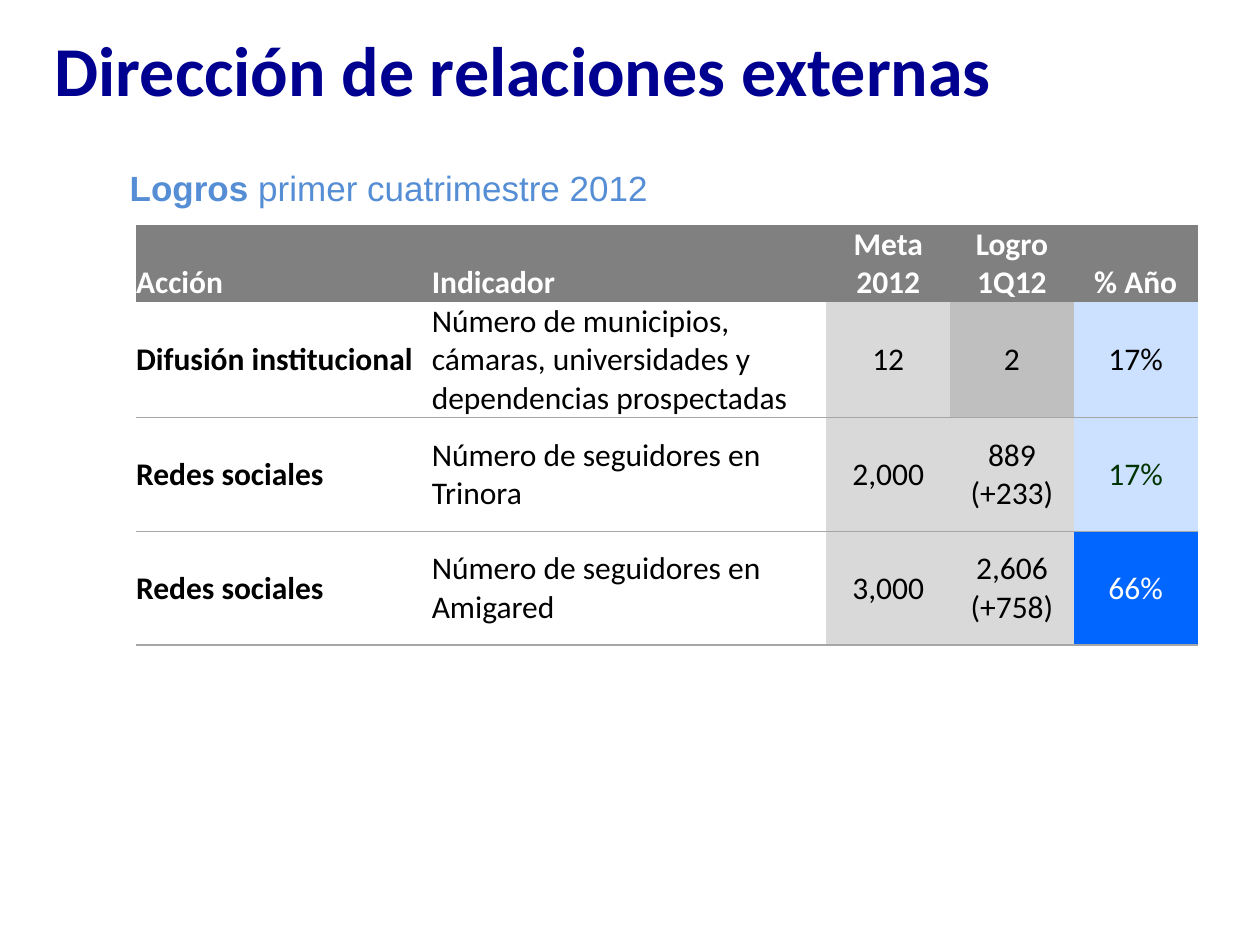
import pptx
import pptx.dml.color
import pptx.enum.text
import pptx.oxml
import pptx.oxml.ns
import pptx.util

Pt = pptx.util.Pt
ALIGN = pptx.enum.text.PP_ALIGN
ANCHOR = pptx.enum.text.MSO_ANCHOR

TITLE = "Dirección de relaciones externas"
SUBTITLE = [("Logros", True), (" primer cuatrimestre 2012", False)]
HEADERS = ["Acción", "Indicador", "Meta 2012", "Logro 1Q12", "% Año"]
ROWS = [
    ["Difusión institucional",
     "Número de municipios, cámaras, universidades y dependencias prospectadas",
     "12", "2", "17%"],
    ["Redes sociales", "Número de seguidores en Trinora", "2,000", "889 (+233)", "17%"],
    ["Redes sociales", "Número de seguidores en Amigared", "3,000", "2,606\n(+758)", "66%"],
]
FILLS = [
    [None, None, "D9D9D9", "BFBFBF", "CCE0FF"],
    [None, None, "D9D9D9", "D9D9D9", "CCE0FF"],
    [None, None, "D9D9D9", "D9D9D9", "0066FF"],
]
SPECIAL_INK = {(2, 4): "003300", (3, 4): "FFFFFF"}

THEME = {
    "font": "Calibri", "subtitle_font": "Arial",
    "title_size": 40, "subtitle_size": 20, "table_size": 18,
    "title": "000090", "subtitle": "558ED5", "ink": "000000",
    "header_ink": "FFFFFF", "header_fill": "808080", "rule": "A6A6A6",
}
COLUMN_WIDTHS = [169, 225.5, 70.7, 70.7, 70.7]
HEADER_HEIGHT, ROW_HEIGHT = 44, 65
NO_STYLE = "{2D5ABB26-0587-4C30-8999-92F81FD0307C}"


def rgb(value):
    return pptx.dml.color.RGBColor.from_string(value)


def place(shape, left, top, width, height):
    shape.left, shape.top = Pt(left), Pt(top)
    shape.width, shape.height = Pt(width), Pt(height)


def style(span, font, size, color, bold):
    span.font.name, span.font.size, span.font.bold = font, Pt(size), bold
    span.font.color.rgb = rgb(color)


def add_bottom_rule(cell):
    line = pptx.oxml.parse_xml(
        f'<a:lnB {pptx.oxml.ns.nsdecls("a")} w="{Pt(1)}"><a:solidFill>'
        f'<a:srgbClr val="{THEME["rule"]}"/></a:solidFill></a:lnB>')
    cell._tc.get_or_add_tcPr().insert(0, line)


def fill_cell(cell, text, row, column):
    header = row == 0
    fill = THEME["header_fill"] if header else FILLS[row - 1][column]
    ink = THEME["header_ink"] if header else SPECIAL_INK.get((row, column), THEME["ink"])
    cell.margin_left = cell.margin_right = cell.margin_top = cell.margin_bottom = 0
    cell.vertical_anchor = ANCHOR.BOTTOM if header else ANCHOR.MIDDLE
    cell.text_frame.text = text
    for para in cell.text_frame.paragraphs:
        if column >= 2:
            para.alignment = ALIGN.CENTER
        else:
            para.alignment = ALIGN.JUSTIFY if header else ALIGN.LEFT
        for span in para.runs:
            style(span, THEME["font"], THEME["table_size"], ink, header or column == 0)
    if fill:
        cell.fill.solid()
        cell.fill.fore_color.rgb = rgb(fill)
    else:
        cell.fill.background()
    if not header:
        add_bottom_rule(cell)


def add_title(page):
    title = page.shapes.title
    place(title, 24, 12, 600, 66)
    title.text_frame.text = TITLE
    title.text_frame.word_wrap = True
    title.text_frame.vertical_anchor = ANCHOR.MIDDLE
    para = title.text_frame.paragraphs[0]
    para.alignment, para.line_spacing = ALIGN.LEFT, Pt(36)
    style(para.runs[0], THEME["font"], THEME["title_size"], THEME["title"], True)


def add_subtitle(page):
    box = page.shapes.add_textbox(Pt(67), Pt(91.5), Pt(594), Pt(34.5))
    box.text_frame.word_wrap = True
    para = box.text_frame.paragraphs[0]
    for text, bold in SUBTITLE:
        span = para.add_run()
        span.text = text
        style(span, THEME["subtitle_font"], THEME["subtitle_size"], THEME["subtitle"], bold)


def add_results(page):
    heights = [HEADER_HEIGHT] + [ROW_HEIGHT] * len(ROWS)
    frame = page.shapes.add_table(len(heights), len(HEADERS), Pt(77.75), Pt(128.75),
                                  Pt(sum(COLUMN_WIDTHS)), Pt(sum(heights)))
    table = frame.table
    table.horz_banding = False
    table._tbl.tblPr.find(pptx.oxml.ns.qn("a:tableStyleId")).text = NO_STYLE
    for column, width in zip(table.columns, COLUMN_WIDTHS):
        column.width = Pt(width)
    for row, height in zip(table.rows, heights):
        row.height = Pt(height)
    for row, texts in enumerate([HEADERS] + ROWS):
        for column, text in enumerate(texts):
            fill_cell(table.cell(row, column), text, row, column)


def main():
    deck = pptx.Presentation()
    deck.slide_width, deck.slide_height = Pt(720), Pt(540)
    page = deck.slides.add_slide(deck.slide_layouts[5])
    add_results(page)
    add_subtitle(page)
    add_title(page)
    deck.save("out.pptx")


if __name__ == "__main__":
    main()
